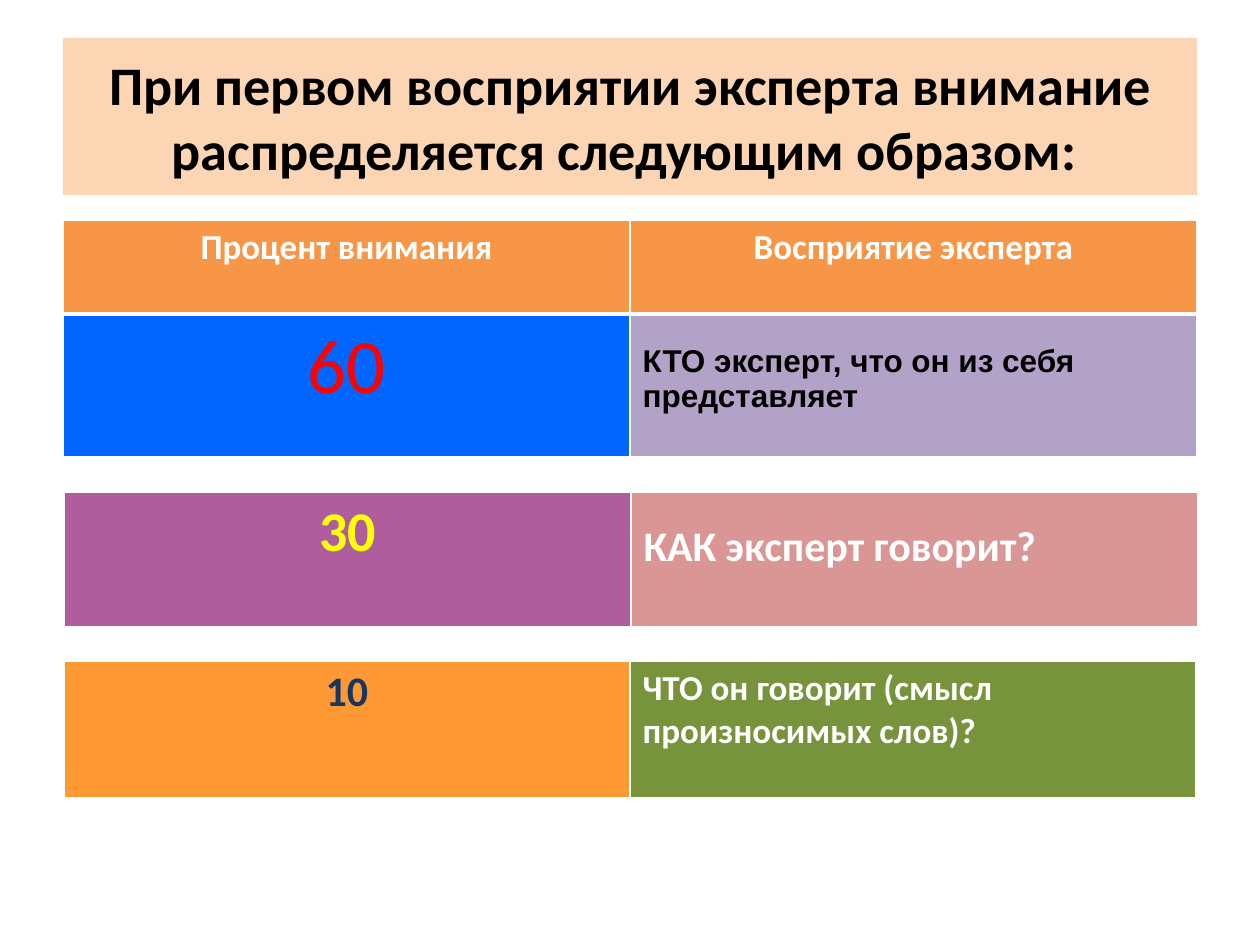
from dataclasses import dataclass

from lxml.etree import SubElement
from pptx import Presentation
from pptx.dml.color import RGBColor
from pptx.enum.shapes import MSO_SHAPE as Shape
from pptx.enum.text import MSO_ANCHOR as Anchor, PP_ALIGN as Align
from pptx.oxml.ns import qn
from pptx.util import Emu, Pt

PX = 914400 // 126


@dataclass(frozen=True)
class Theme:
    font: str = "Calibri"
    accent_font: str = "Arial"
    white: str = "FFFFFF"
    black: str = "000000"
    red: str = "FF0000"
    yellow: str = "FFFF00"
    navy: str = "17375E"
    peach: str = "FCD5B5"
    header: str = "F79646"
    blue: str = "0066FF"
    lavender: str = "B3A2C7"
    plum: str = "AF5D9D"
    rose: str = "D99694"
    orange: str = "FF9933"
    green: str = "77933C"
    title: int = 31
    huge: int = 44
    large: int = 32
    medium: int = 24
    body: int = 20
    small: int = 18


@dataclass(frozen=True)
class Cell:
    text: str
    fill: str
    color: str
    size: int
    bold: bool = True
    font: str = Theme.font
    align: Align = Align.CENTER
    top: int = 6


T = Theme()
TITLE = "При первом восприятии эксперта внимание распределяется следующим образом: "
TITLE_BOX = (63, 38, 1134, 157)
LOWERED = 30  # top inset of answers that sit below the cell's first line

# (left, top, column width, [(row height, cells)])
TABLES = [
    (63, 220, 567, [
        (94, [Cell("Процент внимания", T.header, T.white, T.body),
              Cell("Восприятие эксперта", T.header, T.white, T.body)]),
        (143, [Cell("60", T.blue, T.red, T.huge, bold=False),
               Cell("КТО эксперт, что он из себя представляет", T.lavender, T.black,
                    T.small, font=T.accent_font, align=Align.LEFT, top=LOWERED)]),
    ]),
    (64, 492, 567, [
        (136, [Cell("30", T.plum, T.yellow, T.large),
               Cell("КАК эксперт говорит?", T.rose, T.white, T.medium,
                    align=Align.LEFT, top=LOWERED)]),
    ]),
    (64, 661, 566, [
        (138, [Cell("10", T.orange, T.navy, T.medium),
               Cell("ЧТО он говорит (смысл произносимых слов)?", T.green, T.white,
                    T.body, align=Align.LEFT)]),
    ]),
]


def px(value):
    return Emu(value * PX)


def paint(target, color):
    target.fill.solid()
    target.fill.fore_color.rgb = RGBColor.from_string(color)


def write(frame, text, color, size, bold, font, align):
    frame.word_wrap = True
    paragraph = frame.paragraphs[0]
    paragraph.alignment = align
    run = paragraph.add_run()
    run.text = text
    run.font.name = font
    run.font.size = Pt(size)
    run.font.bold = bold
    run.font.color.rgb = RGBColor.from_string(color)


def add_borders(cell, top, bottom):
    """White cell edges; widths in points. Call before the fill is set."""
    properties = cell._tc.get_or_add_tcPr()
    for side, width in (("L", 1), ("R", 1), ("T", top), ("B", bottom)):
        line = SubElement(properties, qn(f"a:ln{side}"), w=str(Pt(width)))
        SubElement(SubElement(line, qn("a:solidFill")), qn("a:srgbClr"), val=T.white)


def add_title(slide):
    shape = slide.shapes.add_shape(Shape.RECTANGLE, *map(px, TITLE_BOX))
    shape.shadow.inherit = False
    paint(shape, T.peach)
    shape.line.fill.background()
    shape.text_frame.vertical_anchor = Anchor.MIDDLE
    write(shape.text_frame, TITLE, T.black, T.title, True, T.font, Align.CENTER)


def add_attention_table(slide, left, top, column_width, rows):
    columns = len(rows[0][1])
    height = sum(row_height for row_height, _ in rows)
    table = slide.shapes.add_table(len(rows), columns, px(left), px(top),
                                   px(column_width * columns), px(height)).table
    for r, (row_height, cells) in enumerate(rows):
        table.rows[r].height = px(row_height)
        for c, content in enumerate(cells):
            cell = table.cell(r, c)
            # The thick rule runs under the first row only.
            add_borders(cell, top=3 if r else 1, bottom=1 if r else 3)
            paint(cell, content.fill)
            cell.margin_top = px(content.top)
            write(cell.text_frame, content.text, content.color, content.size,
                  content.bold, content.font, content.align)


def main():
    presentation = Presentation()
    presentation.slide_width, presentation.slide_height = px(1260), px(945)
    slide = presentation.slides.add_slide(presentation.slide_layouts[6])
    add_title(slide)
    for table in TABLES:
        add_attention_table(slide, *table)
    presentation.save("out.pptx")


if __name__ == "__main__":
    main()
